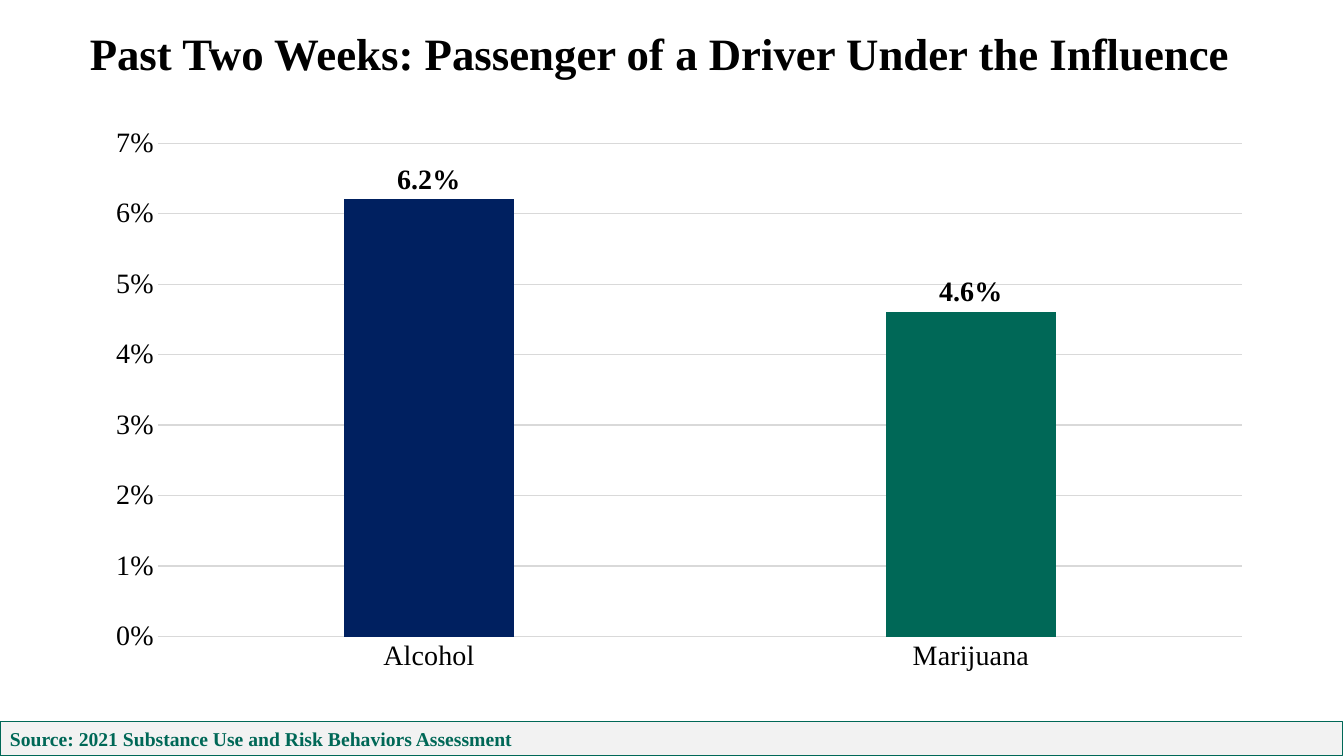
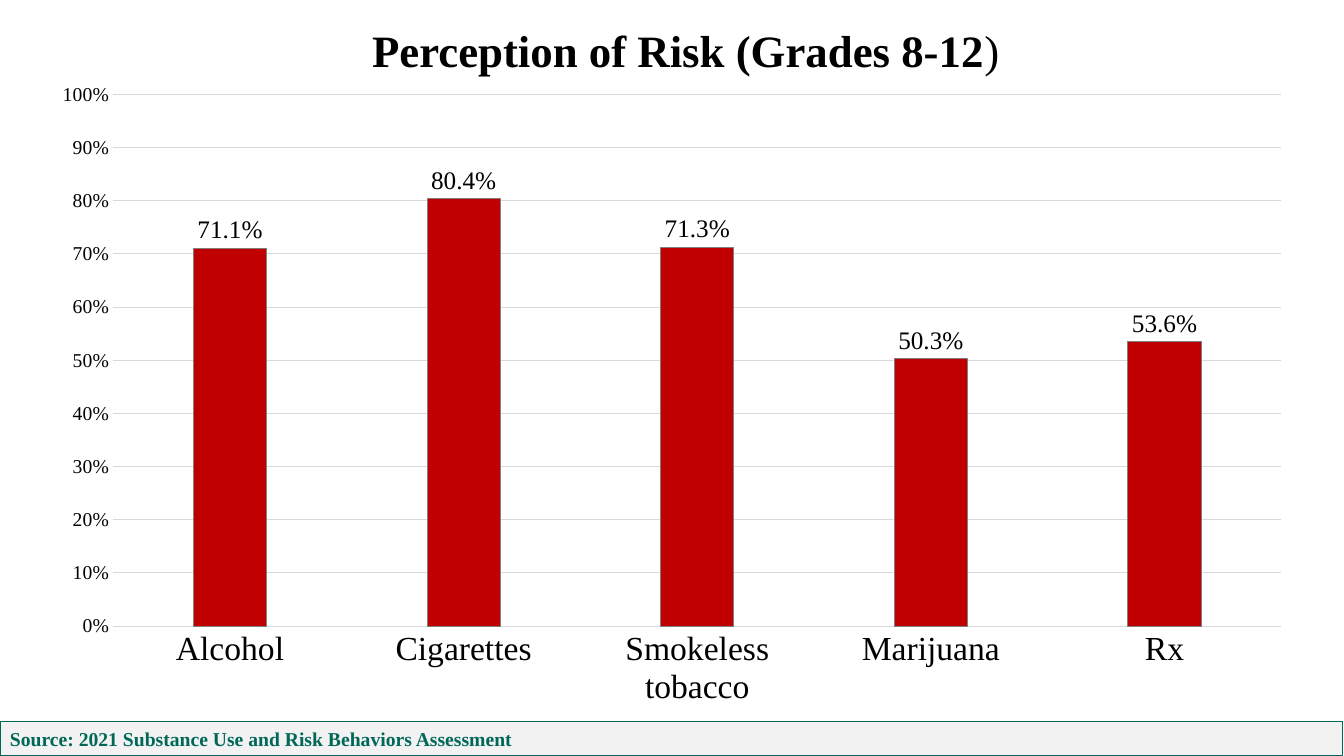
from pptx import Presentation
from pptx import util as u
from pptx.chart.data import CategoryChartData
from pptx.dml.color import RGBColor
from pptx.enum import chart as ch, shapes, text

PX = 9144
FONT = "Times New Roman"
BLACK, GRID, GRAY = "000000", "D9D9D9", "808080"
NAVY, GREEN, RED, PALE = "002060", "006857", "C00000", "F2F2F2"
SOURCE = "Source: 2021 Substance Use and Risk Behaviors Assessment"


def px(*lengths):
    """Turn lengths in px into EMU."""
    return [u.Emu(length * PX) for length in lengths]


def rgb(value):
    """Turn a hex string into a colour."""
    return RGBColor.from_string(value)


def style_font(font, size, bold=False, color=BLACK):
    """Apply the deck's font with a size, weight and colour."""
    font.name, font.size, font.bold = FONT, u.Pt(size), bold
    font.color.rgb = rgb(color)


def style_fill(fill, color):
    """Fill with one solid colour."""
    fill.solid()
    fill.fore_color.rgb = rgb(color)


def style_line(line, color):
    """Give a thin line its colour."""
    line.color.rgb = rgb(color)
    line.width = u.Pt(0.75)


def add_title(slide, box, bold_text, plain_text=""):
    """Place the title, with an optional ending in regular weight."""
    title = slide.shapes.title
    title.left, title.top, title.width, title.height = px(*box)
    frame = title.text_frame
    frame.word_wrap = True
    frame.auto_size = text.MSO_AUTO_SIZE.NONE
    frame.vertical_anchor = text.MSO_ANCHOR.TOP
    heading = frame.paragraphs[0]
    heading.alignment = text.PP_ALIGN.LEFT
    for words, bold in ((bold_text, True), (plain_text, False)):
        if words:
            run = heading.add_run()
            run.text = words
            style_font(run.font, 32, bold)


def add_source(slide):
    """Add the source band along the bottom edge."""
    band = slide.shapes.add_shape(shapes.MSO_SHAPE.RECTANGLE, *px(0, 716, 1332, 34))
    band.shadow.inherit = False
    style_fill(band.fill, PALE)
    style_line(band.line, GREEN)
    frame = band.text_frame
    frame.text = SOURCE
    frame.word_wrap = True
    frame.vertical_anchor = text.MSO_ANCHOR.MIDDLE
    citation = frame.paragraphs[0]
    citation.alignment = text.PP_ALIGN.LEFT
    style_font(citation.runs[0].font, 14, True, GREEN)


def style_axes(chart, category_size, value_size, top, step):
    """Format both axes and the horizontal grid."""
    categories, values = chart.category_axis, chart.value_axis
    for axis, size in ((categories, category_size), (values, value_size)):
        axis.major_tick_mark = axis.minor_tick_mark = ch.XL_TICK_MARK.NONE
        style_font(axis.tick_labels.font, size)
    style_line(categories.format.line, GRID)
    values.format.line.fill.background()
    values.minimum_scale, values.maximum_scale, values.major_unit = 0, top, step
    values.has_major_gridlines = True
    style_line(values.major_gridlines.format.line, GRID)
    values.tick_labels.number_format = "0%"
    values.tick_labels.number_format_is_linked = False


def add_columns(slide, box, rates, color, label_size, label_bold=False):
    """Add a column chart of rates with value labels."""
    data = CategoryChartData(number_format="0.0%")
    data.categories = list(rates)
    data.add_series("Series 1", list(rates.values()))
    chart = slide.shapes.add_chart(
        ch.XL_CHART_TYPE.COLUMN_CLUSTERED, *px(*box), data).chart
    chart.has_title = chart.has_legend = False
    style_font(chart.font, label_size)
    plot = chart.plots[0]
    plot.gap_width, plot.overlap, plot.vary_by_categories = 219, -27, False
    columns = plot.series[0]
    columns.invert_if_negative = False
    style_fill(columns.format.fill, color)
    labels = columns.data_labels
    labels.show_value = True
    labels.position = ch.XL_LABEL_POSITION.OUTSIDE_END
    labels.number_format, labels.number_format_is_linked = "0.0%", False
    style_font(labels.font, label_size, label_bold)
    return chart


def build_passengers(slide):
    """Build the slide on riding with an impaired driver."""
    add_title(slide, (79, 21, 1176, 64),
              "Past Two Weeks: Passenger of a Driver Under the Influence")
    rates = {"Alcohol": 0.062, "Marijuana": 0.046}
    chart = add_columns(slide, (92, 115, 1163, 563), rates, NAVY, 20, True)
    style_axes(chart, 20, 20, 0.07, 0.01)
    marijuana = chart.plots[0].series[0].points[1]
    style_fill(marijuana.format.fill, GREEN)


def build_risk(slide):
    """Build the slide on perception of risk."""
    add_title(slide, (359, 18, 656, 64), "Perception of Risk (Grades 8-12", ")")
    rates = {"Alcohol": 0.711, "Cigarettes": 0.804, "Smokeless tobacco": 0.713,
             "Marijuana": 0.503, "Rx": 0.536}
    chart = add_columns(slide, (37, 70, 1259, 643), rates, RED, 18)
    style_axes(chart, 24, 14, 1, 0.1)
    style_line(chart.plots[0].series[0].format.line, GRAY)


def main():
    """Build and save the deck."""
    deck = Presentation()
    deck.slide_width, deck.slide_height = px(1333, 750)
    title_only = deck.slide_layouts[5]
    for build in (build_passengers, build_risk):
        slide = deck.slides.add_slide(title_only)
        build(slide)
        add_source(slide)
    deck.save("out.pptx")


if __name__ == "__main__":
    main()
